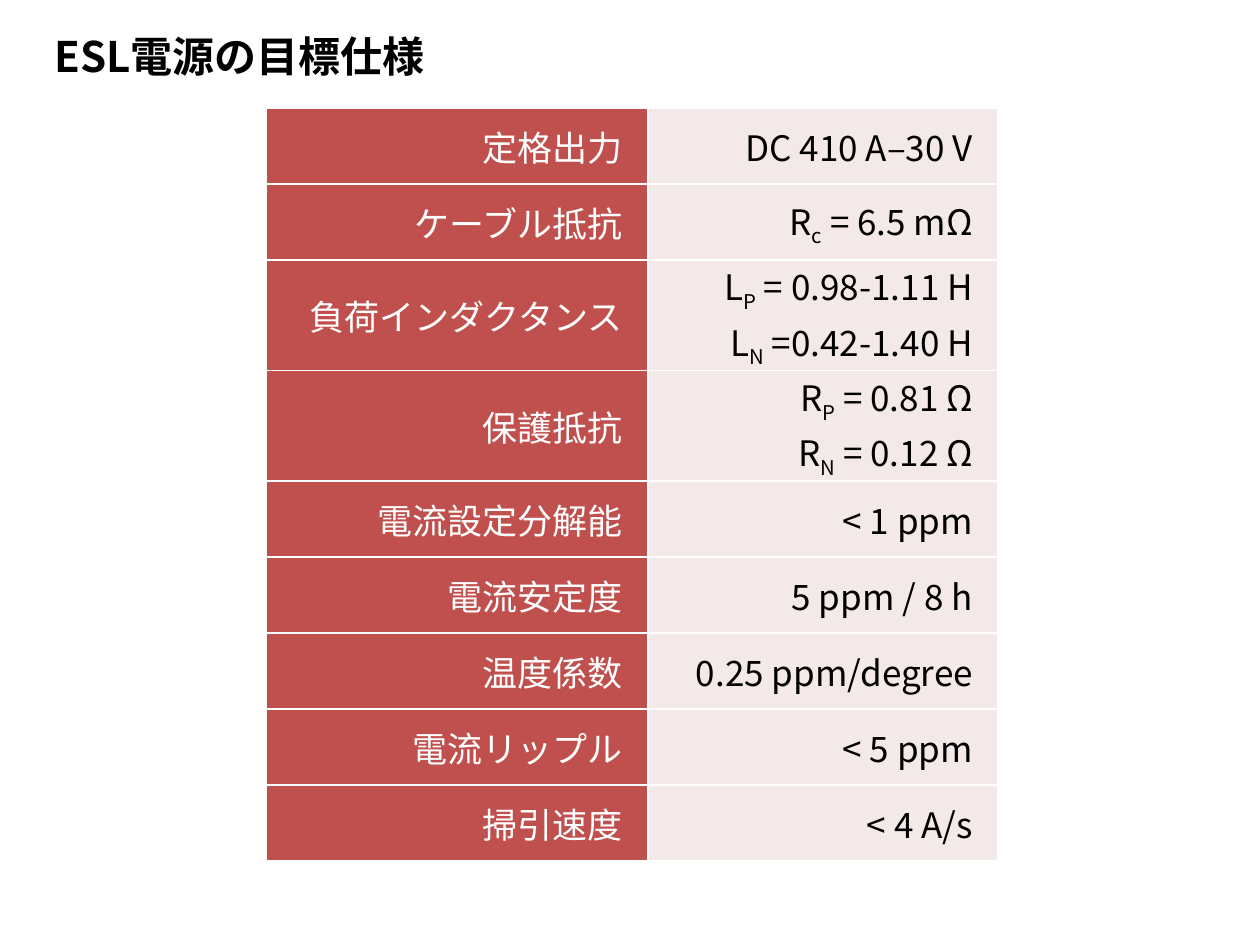
"""Build the slide with the target specifications of the ESL power supply."""
from dataclasses import dataclass

from pptx import Presentation
from pptx import util as u
from pptx.dml.color import RGBColor
from pptx.enum import text
from pptx.oxml import ns, xmlchemy

PX_PER_INCH = 126


@dataclass(frozen=True)
class Theme:
    font: str = "Noto Sans CJK JP"
    ink: str = "000000"
    white: str = "FFFFFF"
    label_fill: str = "C0504D"
    value_fill: str = "F4E9E9"
    title_size: int = 24
    cell_size: int = 20
    border_width: int = 1


@dataclass(frozen=True)
class Specification:
    label: str
    values: tuple[str, ...]
    height: int = 76


THEME = Theme()
SUBSCRIPT_MARK = "|"
SPECIFICATIONS = (
    Specification("定格出力", ("DC 410 A–30 V",)),
    Specification("ケーブル抵抗", ("R|c| = 6.5 mΩ",)),
    Specification("負荷インダクタンス", ("L|P| = 0.98-1.11 H", "L|N| =0.42-1.40 H"), 83),
    Specification("保護抵抗", ("R|P| = 0.81 Ω", "R|N| = 0.12 Ω"), 83),
    Specification("電流設定分解能", ("< 1 ppm",)),
    Specification("電流安定度", ("5 ppm / 8 h",)),
    Specification("温度係数", ("0.25 ppm/degree",)),
    Specification("電流リップル", ("< 5 ppm",)),
    Specification("掃引速度", ("< 4 A/s",)),
)


def px(length: int) -> int:
    return round(length * u.Inches(1) / PX_PER_INCH)


def write_text(frame, lines: tuple[str, ...], *, size: int, color: str,
               align=text.PP_ALIGN.LEFT, bold: bool = False, spacing: float = 1.0) -> None:
    for index, line in enumerate(lines):
        paragraph = frame.add_paragraph() if index else frame.paragraphs[0]
        paragraph.alignment = align
        paragraph.line_spacing = spacing
        for part, content in enumerate(line.split(SUBSCRIPT_MARK)):
            run = paragraph.add_run()
            run.text = content
            run.font.size = u.Pt(size)
            run.font.bold = bold
            run.font.name = THEME.font
            run.font.color.rgb = RGBColor.from_string(color)
            properties = run._r.get_or_add_rPr()
            east_asian = xmlchemy.OxmlElement("a:ea")
            east_asian.set("typeface", THEME.font)
            properties.find(ns.qn("a:latin")).addnext(east_asian)
            if part % 2:
                properties.set("baseline", "-25000")


def add_borders(cell) -> None:
    properties = cell._tc.get_or_add_tcPr()
    for index, side in enumerate(("lnL", "lnR", "lnT", "lnB")):
        line = xmlchemy.OxmlElement(f"a:{side}")
        line.set("w", str(u.Pt(THEME.border_width)))
        fill = xmlchemy.OxmlElement("a:solidFill")
        color = xmlchemy.OxmlElement("a:srgbClr")
        color.set("val", THEME.white)
        fill.append(color)
        line.append(fill)
        properties.insert(index, line)


def fill_cell(cell, lines: tuple[str, ...], *, fill: str, color: str) -> None:
    cell.fill.solid()
    cell.fill.fore_color.rgb = RGBColor.from_string(fill)
    cell.vertical_anchor = text.MSO_ANCHOR.MIDDLE
    cell.margin_left, cell.margin_right = px(9), px(25)
    cell.margin_top = cell.margin_bottom = 0
    write_text(cell.text_frame, lines, size=THEME.cell_size, color=color,
               align=text.PP_ALIGN.RIGHT)
    add_borders(cell)


def add_specification_table(slide) -> None:
    widths = (382, 350)
    total_height = sum(specification.height for specification in SPECIFICATIONS)
    table = slide.shapes.add_table(len(SPECIFICATIONS), len(widths), px(266), px(108),
                                   px(sum(widths)), px(total_height)).table
    table.first_row = table.horz_banding = False
    for column, width in zip(table.columns, widths):
        column.width = px(width)
    for row, specification in zip(table.rows, SPECIFICATIONS):
        row.height = px(specification.height)
        label, value = row.cells
        fill_cell(label, (specification.label,), fill=THEME.label_fill, color=THEME.white)
        fill_cell(value, specification.values, fill=THEME.value_fill, color=THEME.ink)


def set_title(slide) -> None:
    title = slide.shapes.title
    title.left, title.top, title.width, title.height = px(42), px(32), px(404), px(63)
    frame = title.text_frame
    frame.word_wrap = True
    frame.auto_size = text.MSO_AUTO_SIZE.NONE
    frame.vertical_anchor = text.MSO_ANCHOR.TOP
    write_text(frame, ("ESL電源の目標仕様",), size=THEME.title_size, color=THEME.ink,
               bold=True, spacing=0.85)


def main() -> None:
    presentation = Presentation()
    presentation.slide_width, presentation.slide_height = px(1260), px(945)
    slide = presentation.slides.add_slide(presentation.slide_layouts[5])
    add_specification_table(slide)
    set_title(slide)
    presentation.save("out.pptx")


if __name__ == "__main__":
    main()
